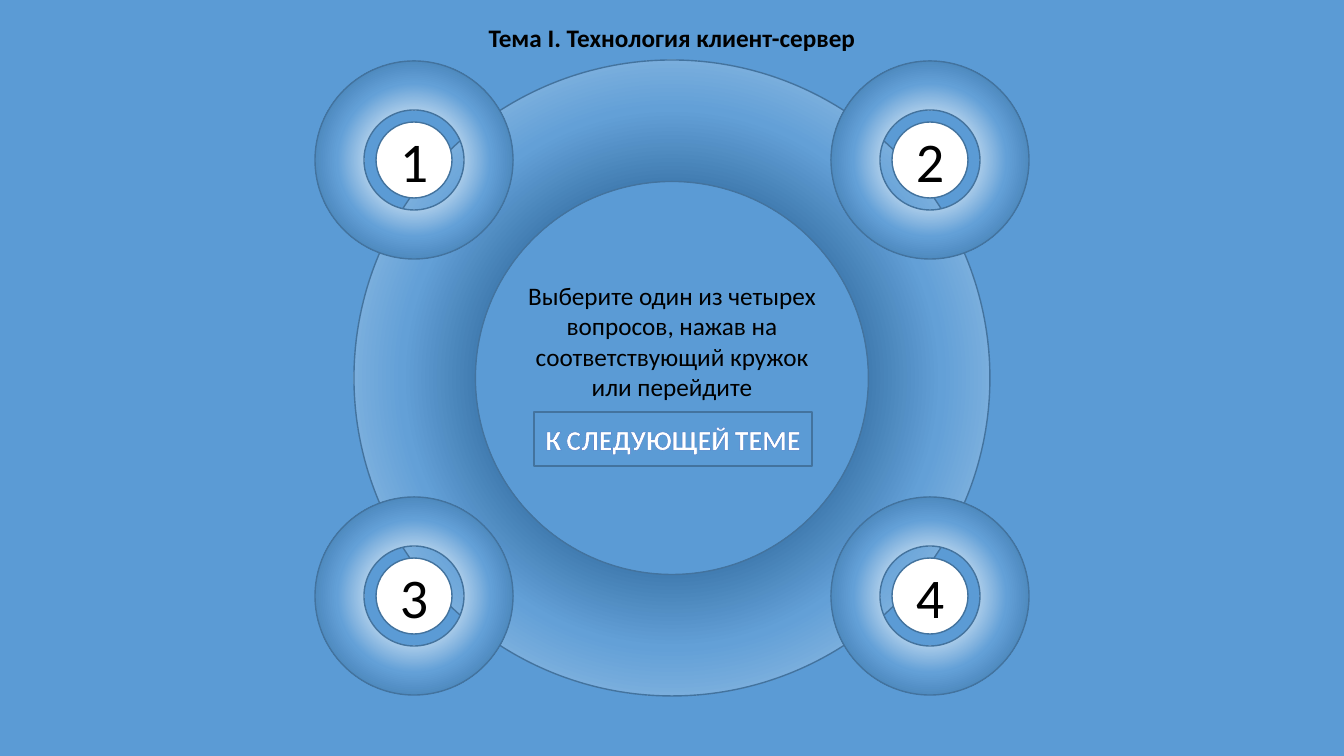
from pptx import Presentation
from pptx.dml.color import RGBColor
from pptx.enum.shapes import MSO_SHAPE
from pptx.enum.text import MSO_ANCHOR, PP_ALIGN
from pptx.oxml import parse_xml
from pptx.oxml.ns import nsdecls, qn
from pptx.util import Pt

PX = 914400 / 100.8
HUES = {
    "base": "5B9BD5", "edge": "43739E", "dark": "255E91", "mid": "63A0D7",
    "pale": "BDD7EE", "white": "FFFFFF", "black": "000000", "rim": "4472C4",
}


def write(shape, text, size, hue="black", bold=False, wrap=True):
    frame = shape.text_frame
    frame.text = text
    frame.word_wrap = wrap
    frame.vertical_anchor = MSO_ANCHOR.MIDDLE
    para = frame.paragraphs[0]
    para.alignment = PP_ALIGN.CENTER
    font = para.runs[0].font
    font.name, font.size, font.bold = "Calibri", Pt(size), bold
    font.color.rgb = RGBColor.from_string(HUES[hue])
    return para


def draw(kind, box, stops):
    shape = shapes.add_shape(kind, *[round(n * PX) for n in box])
    shape.shadow.inherit = False
    shape.line.color.rgb = RGBColor.from_string(HUES["edge"])
    shape.line.width = Pt(1)
    if isinstance(stops, str):
        shape.fill.solid()
        shape.fill.fore_color.rgb = RGBColor.from_string(HUES[stops])
        return shape
    shape.fill.gradient()
    marks = "".join(
        f'<a:gs pos="{pos * 1000}"><a:srgbClr val="{HUES[hue]}"/></a:gs>'
        for pos, hue in stops)
    grad = parse_xml(
        f'<a:gradFill {nsdecls("a")} rotWithShape="1"><a:gsLst>{marks}</a:gsLst>'
        '<a:path path="circle"><a:fillToRect l="50000" t="50000" r="50000" b="50000"/>'
        '</a:path></a:gradFill>')
    props = shape.element.spPr
    props.replace(props.find(qn("a:gradFill")), grad)
    return shape


deck = Presentation()
deck.slide_width, deck.slide_height = round(1344 * PX), round(756 * PX)
slide = deck.slides.add_slide(deck.slide_layouts[5])
slide.background.fill.solid()
slide.background.fill.fore_color.rgb = RGBColor.from_string(HUES["base"])
shapes = slide.shapes

title = shapes.title
title.left, title.top, title.width, title.height = [
    round(n * PX) for n in (37, 21, 1270, 37)]
head = write(title, "Тема I. Технология клиент-сервер", 18, bold=True)
head.line_spacing = 0.9

midx, midy, big = 672, 378, 318
ring = draw(MSO_SHAPE.DONUT, (midx - big, midy - big, 2 * big, 2 * big),
            [(30, "dark"), (60, "mid"), (100, "pale")])
ring.adjustments[0] = 0.191

rad, hole, core = 99, 50, 38
for num in range(4):
    row, col = divmod(num, 2)
    cx, cy = midx + 258 * (2 * col - 1), midy + 218 * (2 * row - 1)
    disc = draw(MSO_SHAPE.DONUT, (cx - rad, cy - rad, 2 * rad, 2 * rad),
                [(29, "white"), (30, "pale"), (55, "mid"), (100, "dark")])
    disc.adjustments[0] = (rad - hole) / (2 * rad)
    spot = draw(MSO_SHAPE.OVAL, (cx - core, cy - core, 2 * core, 2 * core), "white")
    write(spot, str(num + 1), 40, wrap=False)

hint = shapes.add_textbox(*[round(n * PX) for n in (513, 275, 318, 132)])
write(hint, "Выберите один из четырех вопросов, нажав на "
      "соответствующий кружок или перейдите", 18)

button = draw(MSO_SHAPE.ACTION_BUTTON_CUSTOM, (534, 412, 278, 54), "base")
label = write(button, "К СЛЕДУЮЩЕЙ ТЕМЕ", 20, "white", True, False)
props = label.runs[0].font._element if hasattr(label.runs[0].font, "_element") else label.runs[0]._r.get_or_add_rPr()
props.set("cap", "small")
props.insert(0, parse_xml(
    f'<a:ln {nsdecls("a")} w="10160"><a:solidFill><a:srgbClr val="{HUES["rim"]}"/>'
    '</a:solidFill></a:ln>'))

deck.save("out.pptx")
